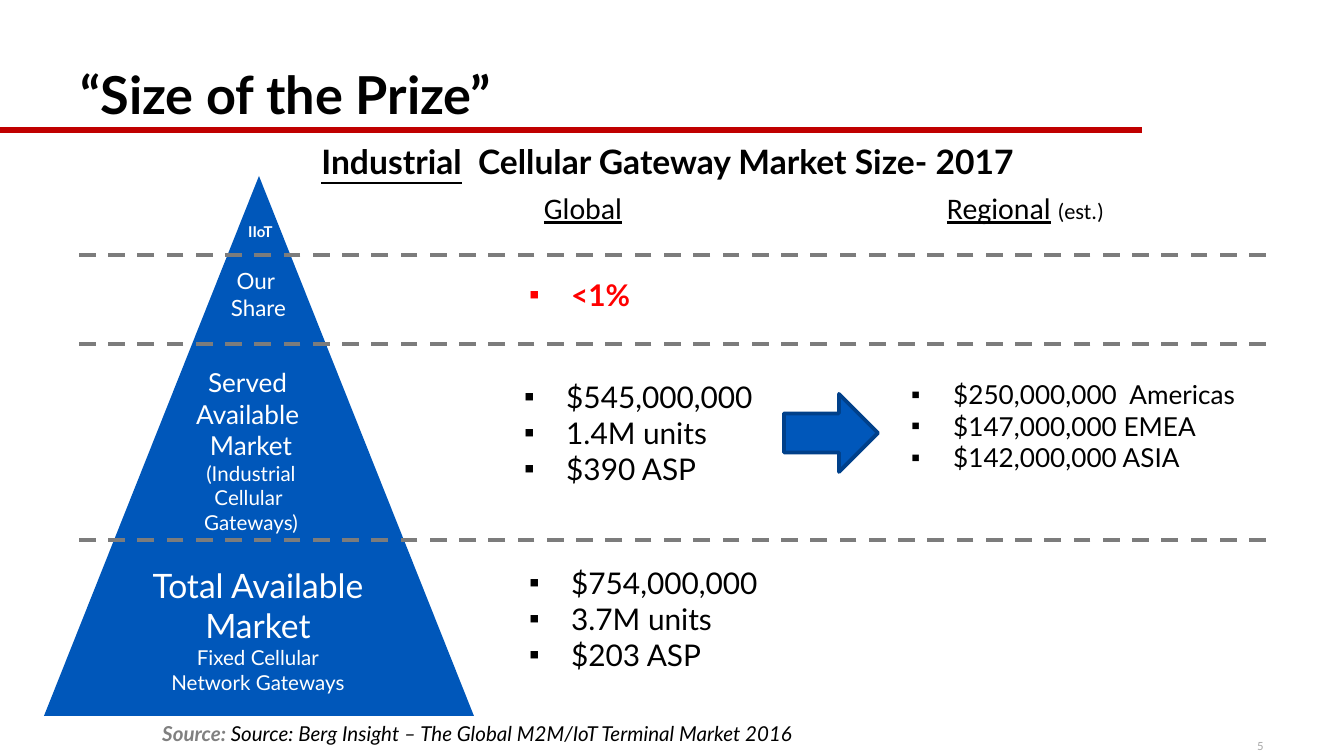
from dataclasses import dataclass

from lxml.etree import SubElement
from pptx import Presentation
from pptx.dml.color import RGBColor
from pptx.enum.dml import MSO_LINE
from pptx.enum.shapes import MSO_CONNECTOR, MSO_SHAPE
from pptx.enum.text import MSO_ANCHOR, MSO_AUTO_SIZE, PP_ALIGN
from pptx.oxml.ns import qn
from pptx.util import Emu, Pt

SCALE = 914400 / 134.4
INDENT = 42
HUES = {
    "black": "000000",
    "white": "FFFFFF",
    "blue": "0057BA",
    "navy": "00408A",
    "rule": "C00000",
    "red": "FF0000",
    "dash": "7C7C7C",
    "gray": "808080",
    "pale": "A6A6A6",
}
LEFT, MID, RIGHT = PP_ALIGN.LEFT, PP_ALIGN.CENTER, PP_ALIGN.RIGHT


@dataclass(frozen=True)
class Bit:
    text: str
    size: int
    hue: str = "black"
    bold: bool = False
    slant: bool = False
    under: bool = False
    font: str = "Lato"


@dataclass(frozen=True)
class Box:
    at: tuple[int, int, int, int]
    lines: list[list[Bit]]
    align: PP_ALIGN = LEFT
    bullet: bool = False
    grow: bool = True
    low: bool = False
    tight: bool = False


@dataclass(frozen=True)
class Rule:
    start: int
    end: int
    y: int
    hue: str
    width: float
    dash: bool = False


def px(count: int) -> Emu:
    return Emu(round(count * SCALE))


def tint(name: str) -> RGBColor:
    return RGBColor.from_string(HUES[name])


def stack(texts: list[str], size: int, hue: str = "black", bold: bool = False) -> list[list[Bit]]:
    return [[Bit(text, size, hue, bold)] for text in texts]


def add_mark(para) -> None:
    props = para._p.get_or_add_pPr()
    props.set("marL", str(px(INDENT)))
    props.set("indent", str(-px(INDENT)))
    SubElement(props, qn("a:buFont")).set("typeface", "Arial")
    SubElement(props, qn("a:buChar")).set("char", "▪")


def style(run, bit: Bit) -> None:
    font = run.font
    font.name = bit.font
    font.size = Pt(bit.size)
    font.bold = bit.bold
    font.italic = bit.slant
    font.underline = bit.under
    font.color.rgb = tint(bit.hue)


def fill_text(shape, box: Box) -> None:
    shape.left, shape.top, shape.width, shape.height = map(px, box.at)
    frame = shape.text_frame
    frame.text = "\n".join(line[0].text for line in box.lines)
    frame.word_wrap = True
    frame.auto_size = MSO_AUTO_SIZE.SHAPE_TO_FIT_TEXT if box.grow else MSO_AUTO_SIZE.NONE
    frame.vertical_anchor = MSO_ANCHOR.BOTTOM if box.low else MSO_ANCHOR.TOP
    for para, line in zip(frame.paragraphs, box.lines):
        para.alignment = box.align
        if box.tight:
            para.line_spacing = 0.9
        if box.bullet:
            add_mark(para)
        for bit in line[1:]:
            para.add_run().text = bit.text
        for run, bit in zip(para.runs, line):
            style(run, bit)


def add_box(slide, box: Box) -> None:
    fill_text(slide.shapes.add_textbox(*map(px, box.at)), box)


def add_rule(slide, rule: Rule) -> None:
    line = slide.shapes.add_connector(
        MSO_CONNECTOR.STRAIGHT, px(rule.start), px(rule.y), px(rule.end), px(rule.y)
    )
    line.line.color.rgb = tint(rule.hue)
    line.line.width = Pt(rule.width)
    if rule.dash:
        line.line.dash_style = MSO_LINE.DASH
    SubElement(line._element.spPr, qn("a:effectLst"))


def add_form(slide, kind: MSO_SHAPE, at: tuple[int, int, int, int], edge: str = "") -> None:
    form = slide.shapes.add_shape(kind, *map(px, at))
    form.shadow.inherit = False
    form.fill.solid()
    form.fill.fore_color.rgb = tint("blue")
    if edge:
        form.line.color.rgb = tint(edge)
        form.line.width = Pt(2)
    else:
        form.line.fill.background()


TITLE = Box((67, 15, 985, 117), stack(["“Size of the Prize”"], 28, bold=True), grow=False, low=True)

FACTS = [
    Box((516, 270, 352, 50), stack(["<1%"], 16, "red", True), bullet=True),
    Box((511, 372, 382, 122), stack(["$545,000,000", "1.4M units", "$390 ASP"], 16), bullet=True),
    Box((516, 558, 352, 159), stack(["$754,000,000", "3.7M units", "$203 ASP"], 16), bullet=True),
    Box(
        (898, 372, 382, 140),
        stack(["$250,000,000  Americas", "$147,000,000 EMEA", "$142,000,000 ASIA"], 14),
        bullet=True,
    ),
]

TIERS = [
    Box((227, 216, 67, 32), stack(["IIoT"], 8, "white", True), MID),
    Box((214, 261, 89, 67), stack(["Our ", "Share"], 12, "white"), MID),
    Box(
        (165, 360, 172, 183),
        stack(["Served ", "Available ", "Market"], 14, "white")
        + stack(["(Industrial Cellular ", "Gateways)"], 11, "white"),
        MID,
    ),
    Box(
        (101, 558, 314, 145),
        stack(["Total Available Market"], 18, "white")
        + stack(["Fixed Cellular", "Network Gateways"], 11, "white"),
        MID,
    ),
]

HEADS = [
    Box(
        (56, 134, 1223, 54),
        [[
            Bit("Industrial", 18, bold=True, under=True),
            Bit("  Cellular Gateway Market Size- 2017", 18, bold=True),
        ]],
        MID,
    ),
    Box((515, 187, 136, 40), [[Bit("Global", 16, under=True, font="Calibri")]], MID, grow=False, tight=True),
    Box(
        (903, 187, 245, 60),
        [[
            Bit("Regional", 16, under=True, font="Calibri"),
            Bit(" ", 16, font="Calibri"),
            Bit("(est.)", 12, font="Calibri"),
        ]],
        MID,
        grow=False,
        tight=True,
    ),
]

NOTES = [
    Box(
        (149, 714, 997, 39),
        [[
            Bit("Source: ", 11, "gray", bold=True, slant=True),
            Bit("Source: Berg Insight – The Global M2M/IoT Terminal Market 2016", 11, slant=True),
        ]],
    ),
    Box((964, 719, 313, 40), stack(["5"], 6, "pale"), RIGHT, grow=False, low=True),
]


def main() -> None:
    deck = Presentation()
    deck.slide_width, deck.slide_height = px(1344), px(756)
    slide = deck.slides.add_slide(deck.slide_layouts[5])
    add_rule(slide, Rule(0, 1142, 130, "rule", 3))
    fill_text(slide.shapes.title, TITLE)
    add_form(slide, MSO_SHAPE.ISOSCELES_TRIANGLE, (44, 176, 430, 540))
    for y in (255, 344, 540):
        add_rule(slide, Rule(1266, 67, y, "dash", 2.25, True))
    for box in FACTS + TIERS + HEADS + NOTES:
        add_box(slide, box)
    add_form(slide, MSO_SHAPE.RIGHT_ARROW, (784, 394, 94, 78), "navy")
    deck.save("out.pptx")


if __name__ == "__main__":
    main()
